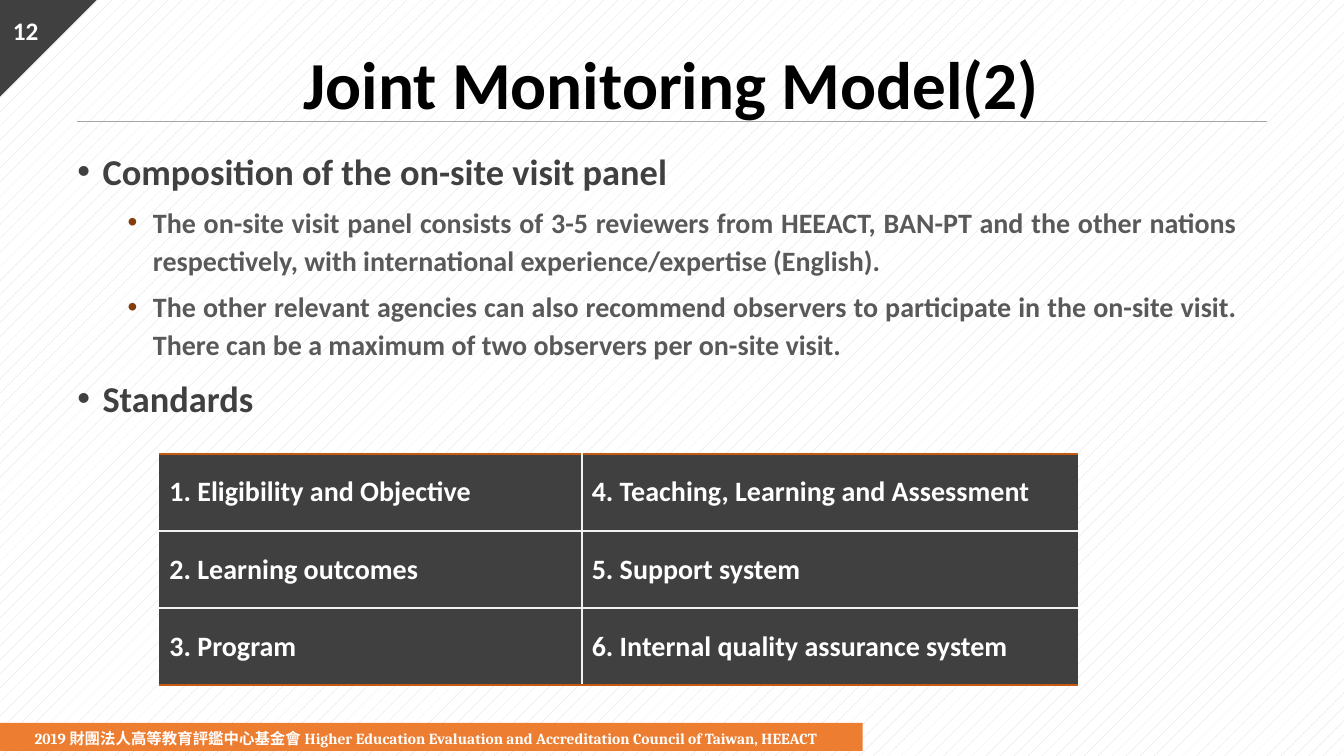
from lxml import etree
from pptx import Presentation
from pptx.dml.color import RGBColor
from pptx.enum import dml, shapes, text
from pptx.oxml import ns
from pptx.util import Pt

CHARCOAL, WHITE, ORANGE, RUST = "404040", "FFFFFF", "ED7D31", "C55A11"
LEFT, CENTER, JUSTIFY = text.PP_ALIGN.LEFT, text.PP_ALIGN.CENTER, text.PP_ALIGN.JUSTIFY


def rgb(color):
    return RGBColor.from_string(color)


def add_xml(parent, tag, **attributes):
    return etree.SubElement(parent, ns.qn(tag), attributes)


class SlideBuilder:
    """Draws styled elements on one slide, measured in points."""

    def __init__(self, slide, font="Calibri"):
        self.slide = slide
        self.font = font

    def background(self, front, back):
        fill = self.slide.background.fill
        fill.patterned()
        fill.pattern = dml.MSO_PATTERN.PERCENT_5
        fill.fore_color.rgb = rgb(front)
        fill.back_color.rgb = rgb(back)

    def shape(self, kind, box, color, rotation=0):
        shape = self.slide.shapes.add_shape(kind, *map(Pt, box))
        shape.shadow.inherit = False
        shape.fill.solid()
        shape.fill.fore_color.rgb = rgb(color)
        shape.line.fill.background()
        shape.rotation = rotation

    def rule(self, left, right, y, color):
        line = self.slide.shapes.add_connector(
            shapes.MSO_CONNECTOR.STRAIGHT, Pt(left), Pt(y), Pt(right), Pt(y))
        line.line.color.rgb = rgb(color)
        line.line.width = Pt(1)
        add_xml(line._element.spPr, "a:effectLst")

    def text_frame(self, box, anchor=text.MSO_ANCHOR.MIDDLE, inset=7.2):
        frame = self.slide.shapes.add_textbox(*map(Pt, box)).text_frame
        frame.word_wrap = True
        frame.vertical_anchor = anchor
        frame.margin_left = Pt(inset)
        return frame

    def style(self, paragraph, words, size, color, align=LEFT, font=None):
        paragraph.text = words
        paragraph.alignment = align
        paragraph.font.name = font or self.font
        paragraph.font.size = Pt(size)
        paragraph.font.bold = True
        paragraph.font.color.rgb = rgb(color)

    def label(self, box, words, size, color, align=LEFT, font=None, inset=7.2, spacing=None):
        paragraph = self.text_frame(box, inset=inset).paragraphs[0]
        if spacing:
            paragraph.line_spacing = Pt(spacing)
        self.style(paragraph, words, size, color, align, font)

    def bullets(self, box, items):
        frame = self.text_frame(box, text.MSO_ANCHOR.TOP)
        for index, (level, spacing, words) in enumerate(items):
            paragraph = frame.add_paragraph() if index else frame.paragraphs[0]
            paragraph.level = level
            paragraph.line_spacing = Pt(spacing)
            if index:
                paragraph.space_before = Pt(6 if level else 12)
            properties = paragraph._p.get_or_add_pPr()
            properties.set("marL", str(Pt(54 if level else 18)))
            properties.set("indent", str(Pt(-18)))
            if level:
                add_xml(add_xml(properties, "a:buClr"), "a:srgbClr", val="843C0B")
            add_xml(properties, "a:buFont", typeface="Arial")
            add_xml(properties, "a:buChar", char="•")
            if level:
                self.style(paragraph, words, 20, "595959", JUSTIFY)
            else:
                self.style(paragraph, words, 26, CHARCOAL)

    def borders(self, cell, colors):
        properties = cell._tc.get_or_add_tcPr()
        for side, color in zip("LRTB", colors):
            line = add_xml(properties, f"a:ln{side}", w=str(Pt(1.5)))
            if color:
                add_xml(add_xml(line, "a:solidFill"), "a:srgbClr", val=color)
            else:
                add_xml(line, "a:noFill")

    def table(self, left, top, widths, row_height, rows, edge, inner):
        last_row, last_column = len(rows) - 1, len(widths) - 1
        table = self.slide.shapes.add_table(
            len(rows), len(widths), Pt(left), Pt(top),
            Pt(sum(widths)), Pt(row_height * len(rows))).table
        table.first_row = table.horz_banding = False
        for column, width in zip(table.columns, widths):
            column.width = Pt(width)
        for r, row in enumerate(rows):
            table.rows[r].height = Pt(row_height)
            for c, words in enumerate(row):
                cell = table.cell(r, c)
                self.borders(cell, (inner if c else None,
                                    inner if c < last_column else None,
                                    inner if r else edge,
                                    inner if r < last_row else edge))
                cell.fill.solid()
                cell.fill.fore_color.rgb = rgb(CHARCOAL)
                cell.vertical_anchor = text.MSO_ANCHOR.MIDDLE
                self.style(cell.text_frame.paragraphs[0], words, 20, WHITE)


def main():
    presentation = Presentation()
    presentation.slide_width, presentation.slide_height = Pt(960), Pt(540)
    builder = SlideBuilder(presentation.slides.add_slide(presentation.slide_layouts[6]))
    builder.background("D9D9D9", WHITE)
    builder.shape(shapes.MSO_SHAPE.RIGHT_TRIANGLE, (0, 0, 69, 69), CHARCOAL, rotation=90)
    builder.label((83, 29.5, 793, 58.5), "Joint Monitoring Model(2)", 48, "000000", CENTER)
    builder.rule(54.7, 905, 87, "A6A6A6")
    builder.shape(shapes.MSO_SHAPE.RECTANGLE, (0, 516.3, 616.3, 20), ORANGE)
    builder.label(
        (13.7, 517, 592.6, 16.6),
        "2019 財團法人高等教育評鑑中心基金會 Higher Education Evaluation and "
        "Accreditation Council of Taiwan, HEEACT",
        11, WHITE, font="Cambria", inset=11, spacing=18)
    builder.label((-1.5, 7.2, 39.6, 28.8), "12", 18, WHITE, CENTER)
    builder.bullets((48.2, 94.3, 842.4, 43.2), [
        (0, 40, "Composition of the on-site visit panel"),
        (1, 27, "The on-site visit panel consists of 3-5 reviewers from HEEACT, BAN-PT and "
                "the other nations respectively, with international experience/expertise "
                "(English)."),
        (1, 27, "The other relevant agencies can also recommend observers to participate in "
                "the on-site visit. There can be a maximum of two observers per on-site visit."),
        (0, 30, "Standards"),
    ])
    builder.table(113.8, 324, (301.7, 354.2), 55.2, [
        ("1. Eligibility and Objective", "4. Teaching, Learning and Assessment"),
        ("2. Learning outcomes", "5. Support system"),
        ("3. Program", "6. Internal quality assurance system"),
    ], edge=RUST, inner="F2F2F2")
    presentation.save("out.pptx")


if __name__ == "__main__":
    main()
